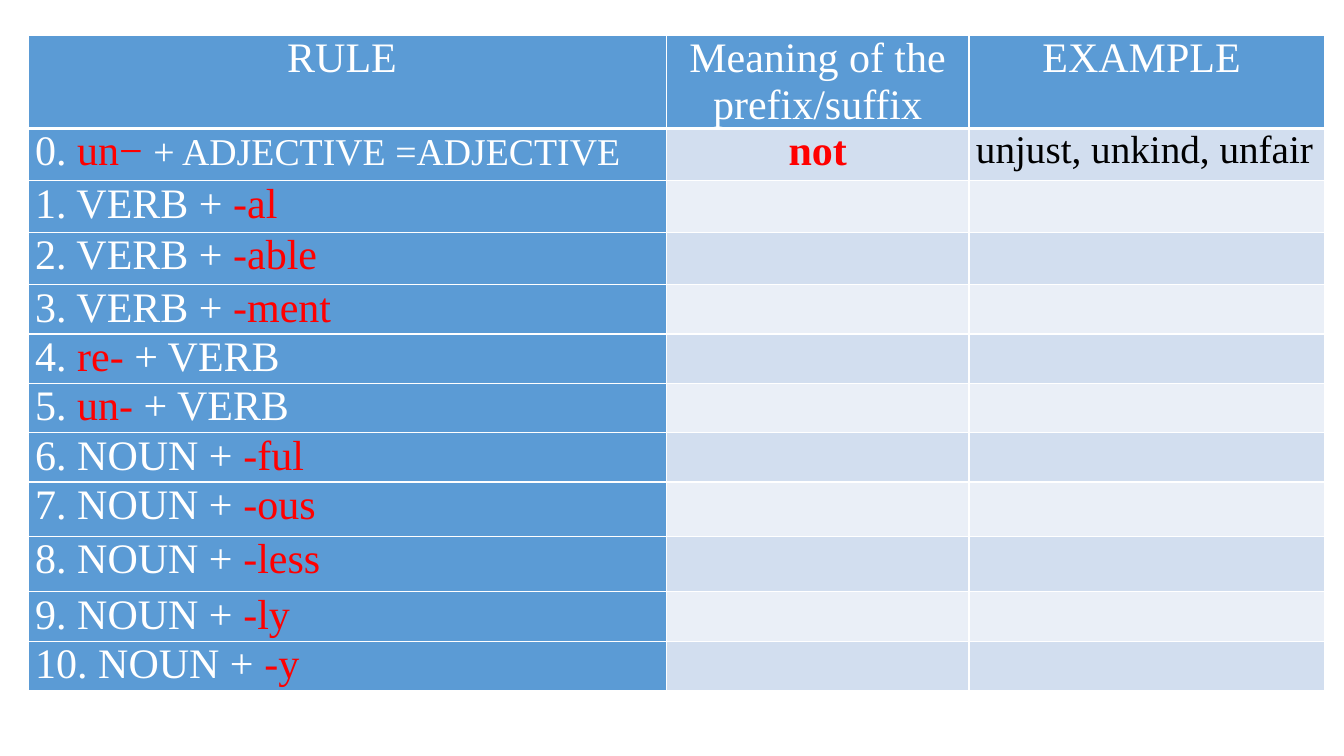
from dataclasses import dataclass

from lxml.etree import SubElement
from pptx import Presentation
from pptx.dml.color import RGBColor
from pptx.enum.text import PP_ALIGN as Align
from pptx.oxml.ns import qn
from pptx.util import Emu, Pt

PX = 9144  # 100 px to the inch
FONT = "Times New Roman"
WHITE = RGBColor(0xFF, 0xFF, 0xFF)
BLACK = RGBColor(0x00, 0x00, 0x00)
RED = RGBColor(0xFF, 0x00, 0x00)
BLUE = RGBColor(0x5B, 0x9B, 0xD5)
BANDS = (RGBColor(0xEA, 0xEF, 0xF7), RGBColor(0xD2, 0xDE, 0xEF))

LEFT, TOP = 28, 35
COL_WIDTHS = (633, 300, 353)
ROW_HEIGHTS = (91, 52, 51, 52, 49, 49, 49, 49, 54, 55, 49, 49)


@dataclass(frozen=True)
class Run:
    text: str
    color: RGBColor = WHITE
    size: int = 30
    bold: bool = False


@dataclass(frozen=True)
class Entry:
    runs: tuple[Run, ...]
    align: Align = Align.LEFT


def heading(text: str) -> Entry:
    return Entry((Run(text),), Align.CENTER)


def suffix_rule(number: int, base: str, suffix: str) -> list[Entry]:
    return [Entry((Run(f"{number}. {base} + "), Run(suffix, RED)))]


def prefix_rule(number: int, prefix: str, base: str) -> list[Entry]:
    return [Entry((Run(f"{number}. "), Run(prefix, RED), Run(f" + {base}")))]


ROWS: list[list[Entry]] = [
    [heading("RULE "), heading("Meaning of the prefix/suffix"), heading("EXAMPLE ")],
    [
        Entry((Run("0. "), Run("un− ", RED), Run("+ ADJECTIVE =ADJECTIVE", size=27))),
        Entry((Run("not", RED, bold=True),), Align.CENTER),
        Entry((Run("unjust, unkind, unfair", BLACK, 28),)),
    ],
    suffix_rule(1, "VERB", "-al"),
    suffix_rule(2, "VERB", "-able"),
    suffix_rule(3, "VERB", "-ment"),
    prefix_rule(4, "re-", "VERB"),
    prefix_rule(5, "un-", "VERB"),
    suffix_rule(6, "NOUN", "-ful"),
    suffix_rule(7, "NOUN", "-ous"),
    suffix_rule(8, "NOUN", "-less"),
    suffix_rule(9, "NOUN", "-ly"),
    suffix_rule(10, "NOUN", "-y"),
]


def px(n: int) -> Emu:
    return Emu(n * PX)


def set_borders(cell, bottom: int) -> None:
    """Draw white borders, 1 pt but for the bottom; call before filling the cell."""
    tc_pr = cell._tc.get_or_add_tcPr()
    for side, width in (("L", 1), ("R", 1), ("T", 1), ("B", bottom)):
        ln = SubElement(tc_pr, qn(f"a:ln{side}"), w=str(Pt(width)))
        fill = SubElement(ln, qn("a:solidFill"))
        SubElement(fill, qn("a:srgbClr"), val=str(WHITE))


def style_cell(cell, row: int, col: int) -> None:
    set_borders(cell, bottom=3 if row == 0 else 1)
    cell.fill.solid()
    cell.fill.fore_color.rgb = BLUE if row == 0 or col == 0 else BANDS[row % 2]
    cell.margin_left = cell.margin_right = px(7)
    cell.margin_top = cell.margin_bottom = 0


def write_entry(cell, entry: Entry) -> None:
    p = cell.text_frame.paragraphs[0]
    p.alignment = entry.align
    for run in entry.runs:
        r = p.add_run()
        r.text = run.text
        r.font.name = FONT
        r.font.size = Pt(run.size)
        r.font.bold = run.bold
        r.font.color.rgb = run.color


def add_rules_table(s) -> None:
    table = s.shapes.add_table(
        len(ROW_HEIGHTS), len(COL_WIDTHS), px(LEFT), px(TOP),
        px(sum(COL_WIDTHS)), px(sum(ROW_HEIGHTS)),
    ).table
    table.first_row = table.horz_banding = False
    for column, width in zip(table.columns, COL_WIDTHS):
        column.width = px(width)
    for i, (row, height, entries) in enumerate(zip(table.rows, ROW_HEIGHTS, ROWS)):
        row.height = px(height)
        for j, cell in enumerate(row.cells):
            style_cell(cell, i, j)
        for cell, entry in zip(row.cells, entries):
            write_entry(cell, entry)


def main() -> None:
    prs = Presentation()
    prs.slide_width, prs.slide_height = px(1333), px(750)
    s = prs.slides.add_slide(prs.slide_layouts[6])
    add_rules_table(s)
    prs.save("out.pptx")


if __name__ == "__main__":
    main()
